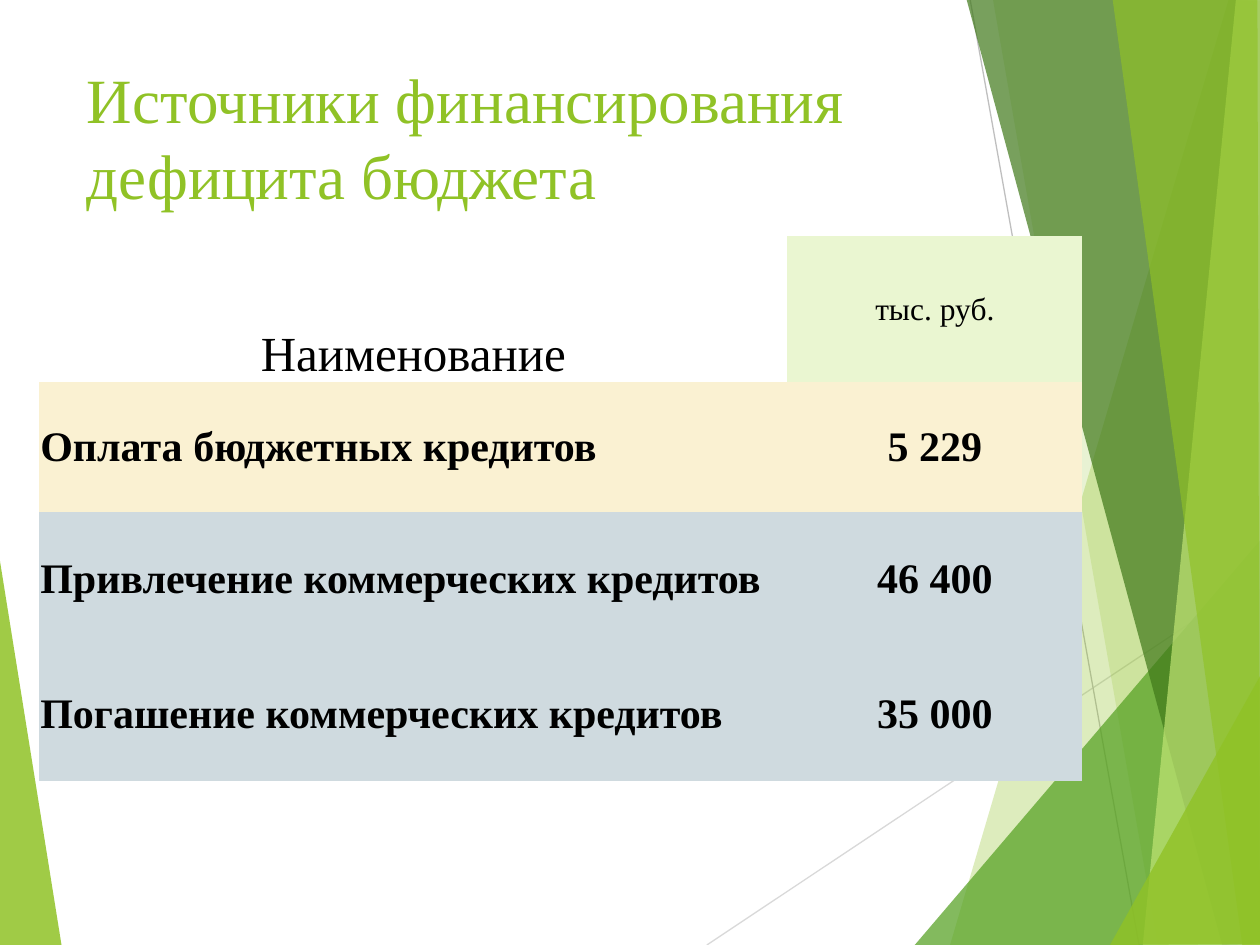
from lxml.etree import SubElement as Sub
from pptx import Presentation
from pptx.dml.color import RGBColor as Rgb
from pptx.enum.shapes import MSO_CONNECTOR as Conn
from pptx.enum.text import MSO_ANCHOR as Anchor, PP_ALIGN as Align
from pptx.oxml.ns import qn
from pptx.util import Inches, Pt

FONT = "Times New Roman"
PLAIN = "{2D5ABB26-0587-4C30-8999-92F81FD0307C}"
LIME = Rgb(0x90, 0xC2, 0x26)
GREEN = Rgb(0x54, 0xA0, 0x21)
DARK = Rgb(0x3F, 0x78, 0x19)
LIGHT = Rgb(0xC0, 0xE4, 0x74)
SILVER = Rgb(0xD9, 0xD9, 0xD9)
GREY = Rgb(0xBF, 0xBF, 0xBF)
BLACK = Rgb(0, 0, 0)
MINT = Rgb(0xEA, 0xF6, 0xD1)
CREAM = Rgb(0xFA, 0xF1, 0xD2)
STEEL = Rgb(0xCF, 0xDA, 0xDF)

LEFT = ([(-0.01, 4.39), (0.49, 7.51), (-0.01, 7.5)], LIME, 85)
RAYS = [
    ((5.61, 7.5), (10.01, 4.57), SILVER),
    ((7.7, 0), (9.04, 7.5), GREY),
]
FACETS = [
    ([(9.75, 0), (7.54, 7.5), (10.02, 7.51), (10.01, 0.01)], LIME, 30),
    ([(7.88, -0.01), (9.19, 7.5), (10.01, 7.5), (10.01, -0.01)], LIME, 20),
    ([(7.26, 7.5), (10, 4.29), (10.01, 7.5)], GREEN, 72),
    ([(7.67, -0.01), (9.7, 7.5), (10.01, 7.49), (10.01, -0.01)], DARK, 70),
    ([(9.81, -0.01), (9.07, 7.5), (10.01, 7.5), (10, -0.01)], LIGHT, 70),
    ([(8.83, -0.01), (9.86, 7.5), (10, 7.5), (9.98, -0.01)], LIME, 65),
    ([(8.81, 7.5), (10.01, 5.35), (10.01, 7.49)], LIME, 80),
]
ROWS = [
    ("Оплата бюджетных кредитов", "5 229", CREAM),
    ("Привлечение коммерческих кредитов", "46 400", STEEL),
    ("Погашение коммерческих кредитов", "35 000", STEEL),
]


def write(frame, text, size, color=BLACK, bold=False, align=Align.LEFT):
    """Put one formatted paragraph into a text frame."""
    para = frame.paragraphs[0]
    para.alignment = align
    run = para.add_run()
    run.text = text
    font = run.font
    font.name, font.size, font.bold = FONT, Pt(size), bold
    font.color.rgb = color


def add_facet(slide, points, color, alpha):
    """Draw a translucent polygon; alpha is in percent."""
    spots = [(Inches(x), Inches(y)) for x, y in points]
    pen = slide.shapes.build_freeform(*spots[0], scale=1.0)
    pen.add_line_segments(spots[1:], close=True)
    shape = pen.convert_to_shape()
    shape.shadow.inherit = False
    shape.line.fill.background()
    shape.fill.solid()
    shape.fill.fore_color.rgb = color
    tint = shape.element.spPr.find(qn("a:solidFill"))[0]
    Sub(tint, qn("a:alpha"), val=str(alpha * 1000))


def add_ray(slide, start, end, color):
    """Draw a thin straight line."""
    ends = [Inches(v) for v in start + end]
    ray = slide.shapes.add_connector(Conn.STRAIGHT, *ends)
    ray.line.color.rgb = color
    ray.line.width = Pt(0.75)
    Sub(ray.element.spPr, qn("a:effectLst"))


def add_title(slide, text):
    """Place and fill the title above the backdrop."""
    title = slide.shapes.title
    title.left, title.top = Inches(0.59), Inches(0.36)
    title.width, title.height = Inches(6.94), Inches(1.44)
    title.element.getparent().append(title.element)
    frame = title.text_frame
    frame.word_wrap = True
    frame.vertical_anchor = Anchor.MIDDLE
    write(frame, text, 36, LIME)


def fill_cell(cell, text, size, fill=None, anchor=Anchor.MIDDLE, **style):
    """Set the text, margins and fill of a table cell."""
    cell.margin_left = cell.margin_right = cell.margin_top = Inches(0.01)
    cell.margin_bottom = 0
    cell.vertical_anchor = anchor
    if fill is None:
        cell.fill.background()
    else:
        cell.fill.solid()
        cell.fill.fore_color.rgb = fill
    write(cell.text_frame, text, size, **style)


def add_grid(slide):
    """Build the table of funding sources."""
    box = [Inches(v) for v in (0.31, 1.87, 8.28, 4.33)]
    holder = slide.shapes.add_table(len(ROWS) + 1, 2, *box)
    next(holder.element.iter(qn("a:tableStyleId"))).text = PLAIN
    grid = holder.table
    grid.first_row = grid.horz_banding = False
    for col, width in zip(grid.columns, (5.94, 2.34)):
        col.width = Inches(width)
    for row, height in zip(grid.rows, (1.16, 1.03, 1.07, 1.07)):
        row.height = Inches(height)
    mid = Align.CENTER
    fill_cell(grid.cell(0, 0), "Наименование", 28, anchor=Anchor.BOTTOM, align=mid)
    fill_cell(grid.cell(0, 1), "тыс. руб.", 18, MINT, align=mid)
    for i, (name, total, fill) in enumerate(ROWS, 1):
        fill_cell(grid.cell(i, 0), name, 24, fill, bold=True)
        fill_cell(grid.cell(i, 1), total, 24, fill, bold=True, align=mid)


def main():
    """Build and save the slide."""
    deck = Presentation()
    deck.slide_width, deck.slide_height = Inches(10), Inches(7.5)
    slide = deck.slides.add_slide(deck.slide_layouts[5])
    add_facet(slide, *LEFT)
    for ray in RAYS:
        add_ray(slide, *ray)
    for facet in FACETS:
        add_facet(slide, *facet)
    add_title(slide, "Источники финансирования дефицита бюджета")
    add_grid(slide)
    deck.save("out.pptx")


if __name__ == "__main__":
    main()
